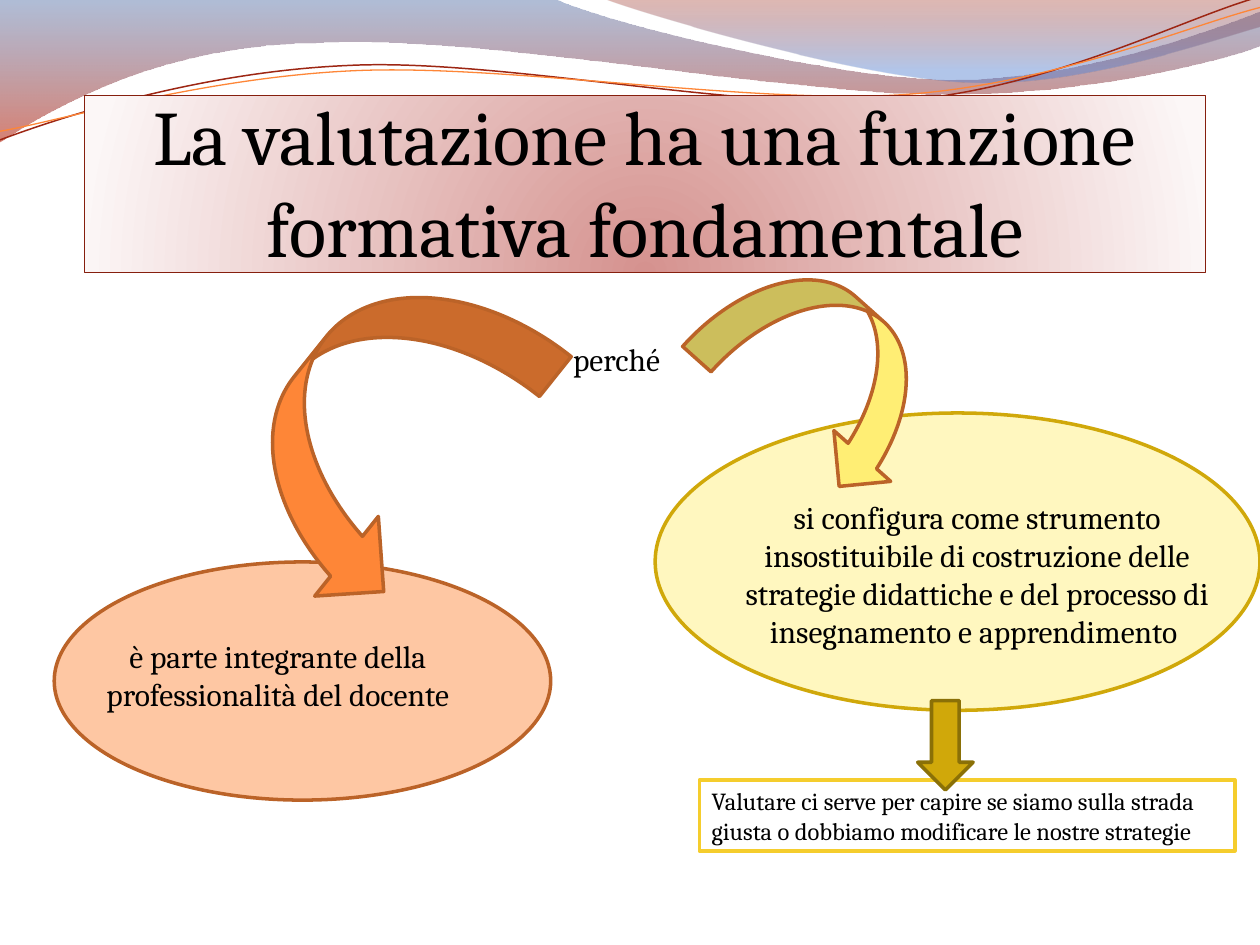
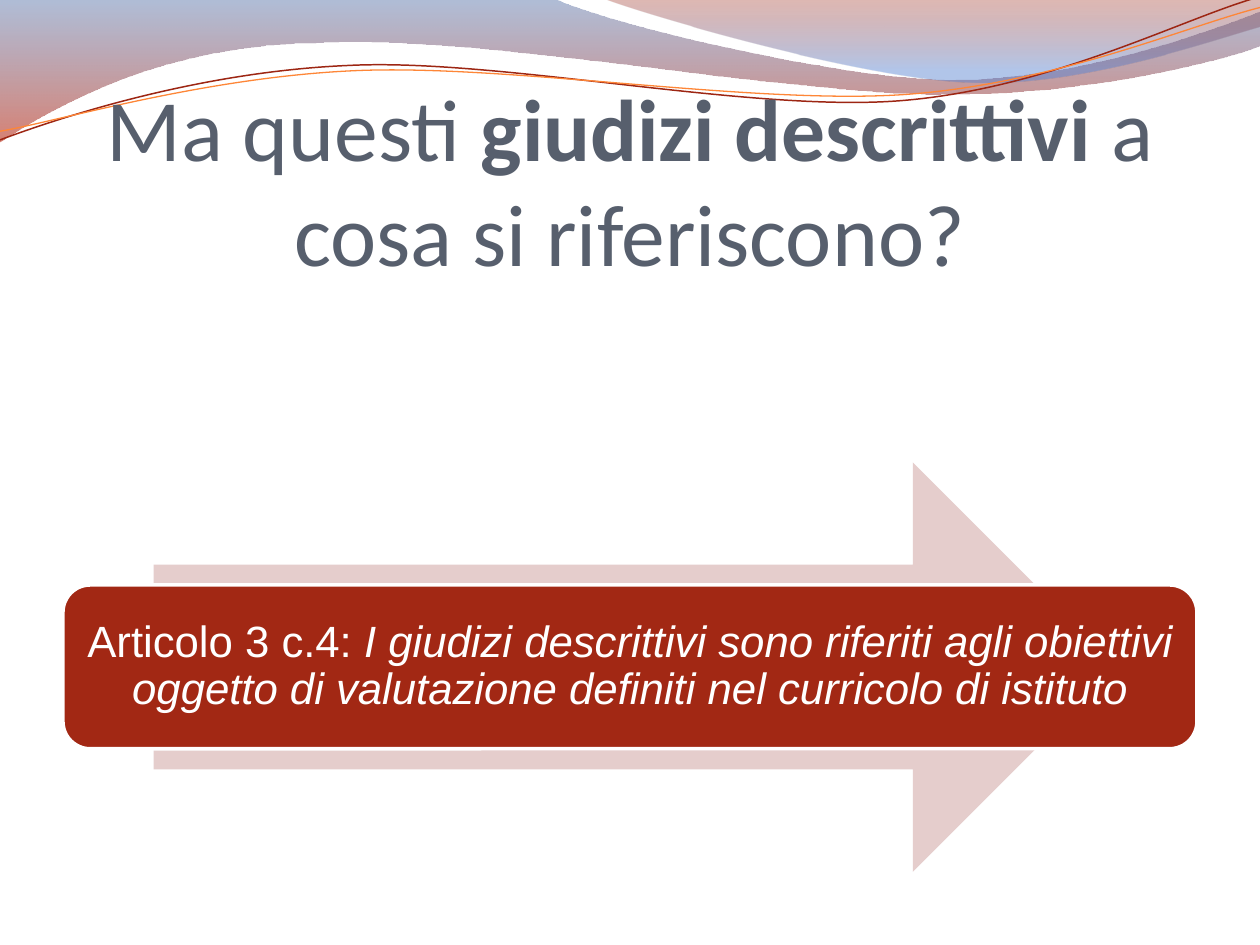
"""Build two slides on the formative role of school assessment."""
from dataclasses import dataclass

from lxml.etree import Element
from pptx import Presentation
from pptx.dml.color import RGBColor as RGB
from pptx.enum.shapes import MSO_SHAPE as SHAPE
from pptx.enum.text import MSO_ANCHOR as ANCHOR, MSO_AUTO_SIZE as FIT, PP_ALIGN as ALIGN
from pptx.oxml import parse_xml
from pptx.oxml.ns import nsdecls, qn
from pptx.util import Pt


@dataclass(frozen=True)
class Theme:
    serif: str = "Cambria"
    sans: str = "Calibri"
    plain: str = "Arial"
    black: str = "000000"
    white: str = "FFFFFF"
    slate: str = "575F6D"
    orange: str = "FE8637"
    rust: str = "BB6328"
    yellow: str = "FFEE74"
    gold: str = "D0A80A"
    dark_gold: str = "8A7007"
    bright_gold: str = "F5CD2D"
    red: str = "A22814"
    blush: str = "E5CDCC"
    title_edge: str = "861F0E"
    title_core: str = "D5928F"
    title_rim: str = "FCF7F7"
    wave_line: str = "9D2613"
    wave_blue: str = "4F6EA7"
    wave_red: str = "B51900"
    crest_blue: str = "5581D1"
    crest_red: str = "941400"
    question_size: int = 50
    title_size: int = 44
    article_size: int = 25
    body_size: int = 18
    note_size: int = 14
    outline: float = 2
    hairline: float = 0.75


T = Theme()


def style(shape, stops=(), direction="", line=None, width=T.outline):
    """Fill with no, one or several (position, colour, opacity) stops and outline the shape."""
    shape.shadow.inherit = False
    shape.fill.background()
    colours = [f'<a:srgbClr val="{colour}"><a:alpha val="{opacity * 1000}"/></a:srgbClr>'
               for _, colour, opacity in stops]
    if len(stops) == 1:
        xml = f'<a:solidFill {nsdecls("a")}>{colours[0]}</a:solidFill>'
    else:
        marks = "".join(f'<a:gs pos="{stop[0] * 1000}">{colour}</a:gs>'
                        for stop, colour in zip(stops, colours))
        xml = (f'<a:gradFill {nsdecls("a")} rotWithShape="1"><a:gsLst>{marks}</a:gsLst>'
               f'{direction}</a:gradFill>')
    if stops:
        properties = shape.element.spPr
        properties.replace(properties.find(qn("a:noFill")), parse_xml(xml))
    if line:
        shape.line.color.rgb = RGB.from_string(line)
        shape.line.width = Pt(width)
    else:
        shape.line.fill.background()


def write(shape, runs, size, font=T.serif, colour=T.black, align=ALIGN.CENTER,
          anchor=ANCHOR.TOP, insets=(7.2, 3.6, 7.2, 3.6)):
    """Write (text, bold, italic) runs as one paragraph."""
    frame = shape.text_frame
    frame.word_wrap = True
    frame.auto_size = FIT.NONE
    frame.vertical_anchor = anchor
    (frame.margin_left, frame.margin_top,
     frame.margin_right, frame.margin_bottom) = map(Pt, insets)
    paragraph = frame.paragraphs[0]
    paragraph.alignment = align
    for text, bold, italic in runs:
        run = paragraph.add_run()
        run.text = text
        run.font.name = font
        run.font.size = Pt(size)
        run.font.bold = bold
        run.font.italic = italic
        run.font.color.rgb = RGB.from_string(colour)
    return paragraph


deck = Presentation()
deck.slide_width, deck.slide_height = Pt(720), Pt(540)
layout = deck.slide_layouts[5]
function_slide = deck.slides.add_slide(layout)
question_slide = deck.slides.add_slide(layout)

waves = [
    ((0, 0),
     [(316.8, -0.7), (342.7, 12.2, 478.1, 45.4, 545.8, 45.4),
      (614.2, 45.4, 689.8, 18.7, 720, 6.5), (720.7, 25.9),
      (707.8, 31.7, 626.4, 54.7, 537.1, 54), (447.8, 54, 275, 20.2, 185, 24.5),
      (92.9, 25.2, 33.1, 59.8, -0.7, 81.4)],
     [(0, T.wave_blue, 45), (100, T.wave_red, 55)], 90, None, 0),
    ((344.9, -0.7),
     [(366.5, 7.9, 491, 44.6, 553.7, 46.8), (616.3, 49.7, 691.9, 23, 720, 15.1), (720, 0)],
     [(20, T.crest_blue, 45), (100, T.crest_red, 30)], 270, None, 0),
    ((-1.4, 63),
     [(33.8, 51.7, 114.1, 29.4, 199.8, 29.9), (284.9, 29.6, 425.8, 67.3, 512.5, 64.9),
      (599.1, 62.4, 676.4, 25.7, 720.2, 15.5)],
     [], 0, T.wave_line, 0.85),
    ((-1.1, 58),
     [(32.9, 53.8, 118.3, 32.5, 204.1, 33), (290.6, 33.4, 428.9, 63.1, 515.5, 61.4),
      (601.4, 59.6, 678.4, 30.1, 721.4, 21.3)],
     [], 0, T.orange, T.hairline),
]
for number, (start, segments, stops, angle, line, width) in enumerate(waves):
    points = [(Pt(x), Pt(y)) for segment in segments
              for x, y in zip(segment[::2], segment[1::2])]
    builder = function_slide.shapes.build_freeform(*map(Pt, start))
    builder.add_line_segments(points, close=bool(stops))
    wave = builder.convert_to_shape()
    steps = list(wave.element.iter(qn("a:lnTo")))
    for segment in segments:
        count = len(segment) // 2
        parts, steps = steps[:count], steps[count:]
        if count == 3:
            curve = Element(qn("a:cubicBezTo"))
            parts[0].addprevious(curve)
            for part in parts:
                curve.append(part[0])
                part.getparent().remove(part)
    style(wave, stops, f'<a:lin ang="{angle * 60000}" scaled="0"/>', line, width)
    wave.rotation = 0 if stops else 357.3
    wave.element.nvSpPr.cNvPr.id = 100 + number
    layout.shapes.element.append(wave.element)

titles = [
    (function_slide, (48.2, 54.7, 640.8, 101.2), T.title_size, T.serif, T.black,
     [("La valutazione ha una funzione formativa fondamentale", False, False)]),
    (question_slide, (36, 55.4, 648, 106.8), T.question_size, T.sans, T.slate,
     [("Ma questi ", False, False), ("giudizi descrittivi ", True, False),
      ("a cosa si riferiscono?", False, False)]),
]
for slide, box, size, font, colour, runs in titles:
    title = slide.shapes.title
    title.left, title.top, title.width, title.height = map(Pt, box)
    write(title, runs, size, font, colour, anchor=ANCHOR.BOTTOM, insets=(0, 3.6, 0, 0))

style(function_slide.shapes.title, [(0, T.title_core, 100), (100, T.title_rim, 100)],
      '<a:path path="circle"><a:fillToRect l="50000" t="100000" r="50000" b="0"/></a:path>',
      T.title_edge, T.hairline)

ovals = [
    (SHAPE.OVAL, (374.4, 236, 345.6, 169.9), 0, T.yellow, 46, T.gold),
    (SHAPE.OVAL, (31, 321.1, 283.7, 136.1), 0, T.orange, 46, T.rust),
]
arrows = [
    (SHAPE.CURVED_LEFT_ARROW, (428.4, 141.9, 87.1, 141.8), 311.8, T.yellow, 100, T.rust),
    (SHAPE.CURVED_RIGHT_ARROW, (159.9, 145.5, 116.6, 200.9), 38.6, T.orange, 100, T.rust),
]
conclusion = [
    (SHAPE.RECTANGLE, (399.6, 445.7, 306, 40.5), 0, T.white, 100, T.bright_gold),
    (SHAPE.DOWN_ARROW, (524.4, 400.3, 31.7, 51.1), 0, T.gold, 100, T.dark_gold),
]
for kind, box, rotation, colour, opacity, line in ovals + arrows + conclusion:
    figure = function_slide.shapes.add_shape(kind, *map(Pt, box))
    figure.rotation = rotation
    style(figure, [(0, colour, opacity)], line=line)
    if kind == SHAPE.RECTANGLE:
        write(figure, [("Valutare ci serve per capire se siamo sulla strada giusta o dobbiamo "
                        "modificare le nostre strategie", False, False)],
              T.note_size, align=ALIGN.LEFT)

reasons = [
    ((402.5, 281.2, 311.8, 93.6), ALIGN.CENTER,
     "si configura come strumento insostituibile di costruzione delle strategie didattiche "
     "e del processo di insegnamento e apprendimento "),
    ((320.4, 190.8, 90.7, 28.8), ALIGN.LEFT, "perché"),
    ((36.7, 360.7, 244.1, 50.4), ALIGN.CENTER,
     "è parte integrante della professionalità del docente"),
]
for box, align, text in reasons:
    reason = function_slide.shapes.add_textbox(*map(Pt, box))
    write(reason, [(text, False, False)], T.body_size, align=align)

arrow = question_slide.shapes.add_shape(
    SHAPE.RIGHT_ARROW, Pt(87.8), Pt(264.2), Pt(550.8), Pt(234))
style(arrow, [(0, T.blush, 100)])
article = question_slide.shapes.add_shape(
    SHAPE.ROUNDED_RECTANGLE, Pt(36), Pt(334.3), Pt(648), Pt(93.6))
style(article, [(0, T.red, 100)], line=T.white)
rule = write(article,
             [("Articolo 3 c.4: ", False, False),
              ("I giudizi descrittivi sono riferiti agli obiettivi oggetto di valutazione "
               "definiti nel curricolo di istituto", False, True)],
             T.article_size, T.plain, T.white, anchor=ANCHOR.MIDDLE, insets=(2.6, 2.6, 2.6, 2.6))
rule.line_spacing = 0.9

deck.save("out.pptx")
